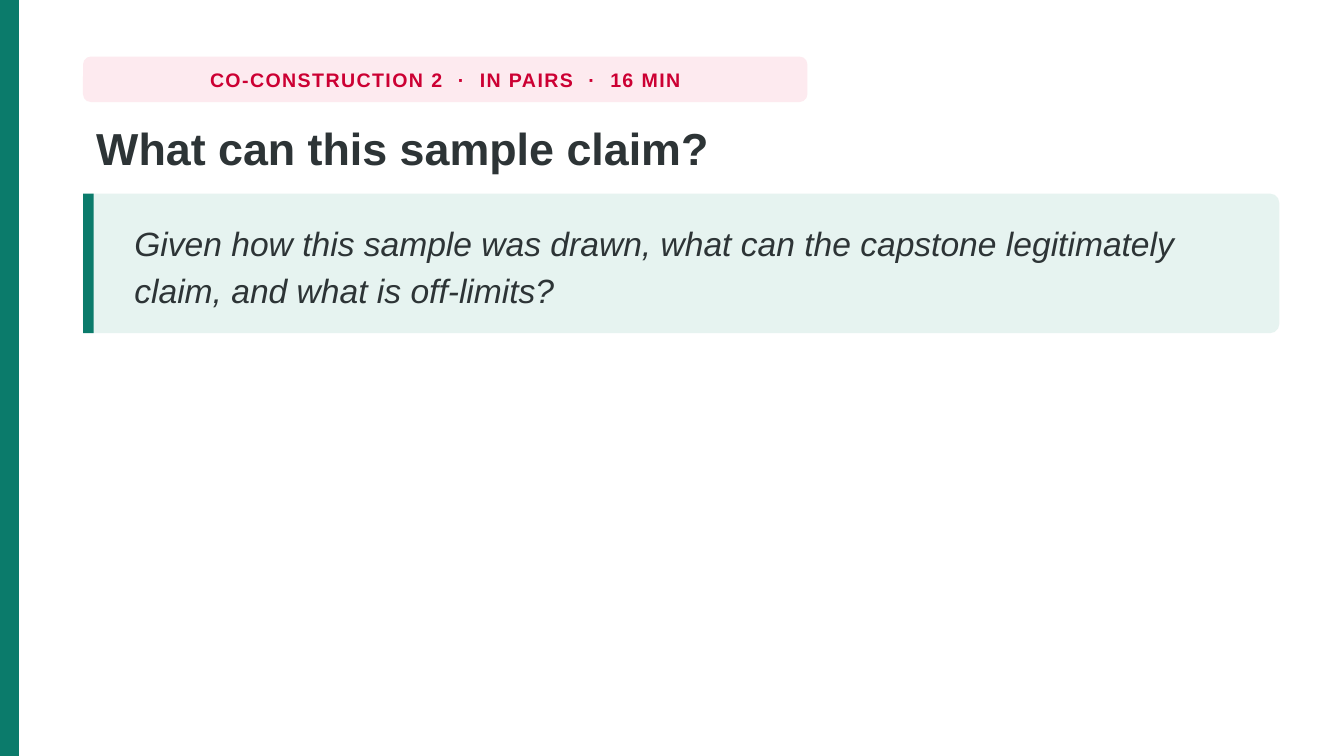
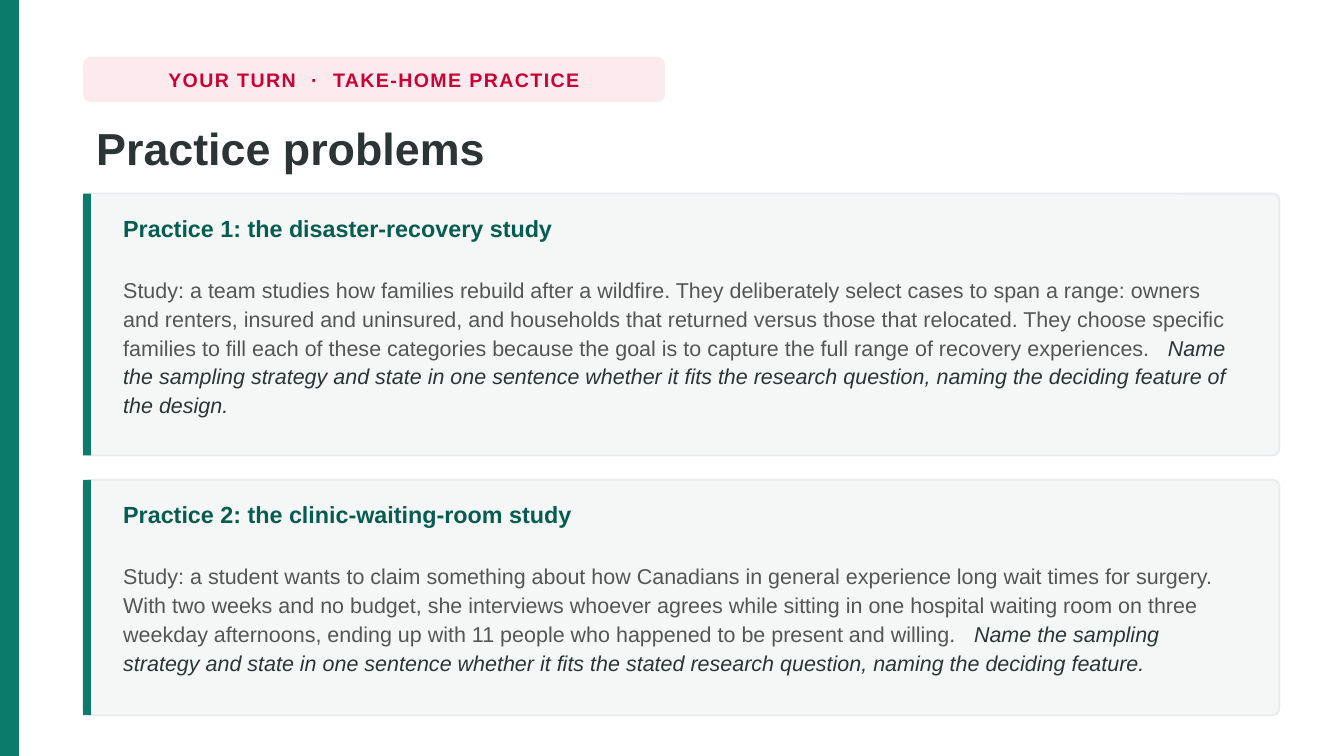
from dataclasses import dataclass

from pptx import Presentation
from pptx.dml.color import RGBColor as Rgb
from pptx.enum.shapes import MSO_SHAPE as Kind
from pptx.enum.text import MSO_ANCHOR as Anchor, PP_ALIGN as Align
from pptx.shapes.autoshape import Shape
from pptx.slide import Slide
from pptx.text.text import TextFrame as Frame, _Paragraph as Para, _Run as Run
from pptx.util import Cm, Pt


@dataclass(frozen=True)
class Theme:
    face: str = "Arial"
    green: str = "0B7B6B"
    deep: str = "065C50"
    mint: str = "E6F3F0"
    rose: str = "FDEAEF"
    red: str = "CC0033"
    ink: str = "2D3436"
    grey: str = "555555"
    pale: str = "F4F7F6"
    edge: str = "E8ECEE"
    tag: float = 10.5
    title: float = 24
    quote: float = 18
    head: float = 12.5
    body: float = 11.5


@dataclass(frozen=True)
class Box:
    """A place on the slide, in centimetres."""
    left: float
    top: float
    width: float
    height: float

    def lengths(self) -> tuple[Cm, Cm, Cm, Cm]:
        return Cm(self.left), Cm(self.top), Cm(self.width), Cm(self.height)


@dataclass(frozen=True)
class Card:
    head: str
    study: str
    task: str
    height: float


THEME = Theme()
WIDE, HIGH = 25.4, 14.29
LEFT, SPAN = 1.57, 22.61
TOP, GAP = 3.66, 0.46

CARDS = (
    Card(
        "Practice 1: the disaster-recovery study",
        "Study: a team studies how families rebuild after a wildfire. They deliberately "
        "select cases to span a range: owners and renters, insured and uninsured, and "
        "households that returned versus those that relocated. They choose specific "
        "families to fill each of these categories because the goal is to capture the "
        "full range of recovery experiences.",
        "Name the sampling strategy and state in one sentence whether it fits the "
        "research question, naming the deciding feature of the design.",
        4.95,
    ),
    Card(
        "Practice 2: the clinic-waiting-room study",
        "Study: a student wants to claim something about how Canadians in general "
        "experience long wait times for surgery. With two weeks and no budget, she "
        "interviews whoever agrees while sitting in one hospital waiting room on three "
        "weekday afternoons, ending up with 11 people who happened to be present and "
        "willing.",
        "Name the sampling strategy and state in one sentence whether it fits the "
        "stated research question, naming the deciding feature.",
        4.45,
    ),
)


def add_block(slide: Slide, box: Box, fill: str, round_by: float = 0,
              edge: str | None = None) -> Shape:
    """Draw a filled rectangle; round_by is the corner radius in centimetres."""
    kind = Kind.ROUNDED_RECTANGLE if round_by else Kind.RECTANGLE
    shape = slide.shapes.add_shape(kind, *box.lengths())
    shape.shadow.inherit = False
    shape.fill.solid()
    shape.fill.fore_color.rgb = Rgb.from_string(fill)
    if round_by:
        shape.adjustments[0] = round_by / box.height
    if edge:
        shape.line.color.rgb = Rgb.from_string(edge)
        shape.line.width = Pt(1)
    else:
        shape.line.fill.background()
    return shape


def add_frame(slide: Slide, box: Box, anchor: Anchor = Anchor.TOP,
              wrap: bool = True) -> Frame:
    frame = slide.shapes.add_textbox(*box.lengths()).text_frame
    frame.word_wrap = wrap
    frame.vertical_anchor = anchor
    return frame


def style(para: Para, size: float, ink: str, bold: bool = False,
          slant: bool = False, lead: float | None = None) -> None:
    font = para.font
    font.name = THEME.face
    font.size = Pt(size)
    font.bold = bold
    font.italic = slant
    font.color.rgb = Rgb.from_string(ink)
    if lead:
        para.line_spacing = lead


def add_run(para: Para, text: str, track: float = 0) -> Run:
    """Add a run; track is its letter spacing in points."""
    run = para.add_run()
    run.text = text
    if track:
        run.font._element.set("spc", str(round(track * 100)))
    return run


def add_tag(slide: Slide, parts: tuple[str, ...], width: float) -> None:
    box = Box(LEFT, 1.07, width, 0.86)
    add_block(slide, box, THEME.rose, 0.15)
    para = add_frame(slide, box, Anchor.MIDDLE, wrap=False).paragraphs[0]
    para.alignment = Align.CENTER
    style(para, THEME.tag, THEME.red, bold=True)
    for index, part in enumerate(parts):
        if index:
            for mark, track in ((" ", 4.5), ("·", 0.8), (" ", 4.5)):
                add_run(para, mark, track)
        add_run(para, part, 0.8)


def add_base(deck: Presentation, parts: tuple[str, ...], width: float,
             title: str) -> Slide:
    """Add a slide with the side band, tag and title."""
    slide = deck.slides.add_slide(deck.slide_layouts[6])
    add_block(slide, Box(0, 0, 0.36, HIGH), THEME.green)
    add_tag(slide, parts, width)
    para = add_frame(slide, Box(LEFT, 2.13, SPAN, 1.42)).paragraphs[0]
    style(para, THEME.title, THEME.ink, bold=True, lead=1.02)
    add_run(para, title)
    return slide


def add_panel(slide: Slide, box: Box, fill: str, round_by: float, band: float,
              edge: str | None = None) -> None:
    """Draw a rounded panel with a green band down its left side."""
    add_block(slide, box, fill, round_by, edge)
    add_block(slide, Box(box.left, box.top, band, box.height), THEME.green)


def add_quote(slide: Slide, text: str) -> None:
    box = Box(LEFT, TOP, SPAN, 2.64)
    add_panel(slide, box, THEME.mint, 0.18, 0.2)
    inner = Box(2.29, TOP + 0.13, 21.21, box.height - 0.26)
    para = add_frame(slide, inner, Anchor.MIDDLE).paragraphs[0]
    style(para, THEME.quote, THEME.ink, slant=True, lead=1.16)
    add_run(para, text)


def add_card(slide: Slide, card: Card, top: float) -> None:
    add_panel(slide, Box(LEFT, top, SPAN, card.height), THEME.pale, 0.13, 0.15,
              THEME.edge)
    frame = add_frame(slide, Box(2.08, top + 0.2, 21.54, card.height - 0.4))
    head = frame.paragraphs[0]
    style(head, THEME.head, THEME.deep, bold=True, lead=1.12)
    head.space_after = Pt(17)
    add_run(head, card.head)
    body = frame.add_paragraph()
    style(body, THEME.body, THEME.grey, lead=1.12)
    add_run(body, card.study)
    add_run(body, " ", 6.4)
    task = add_run(body, card.task)
    task.font.italic = True
    task.font.color.rgb = Rgb.from_string(THEME.ink)


def main() -> None:
    deck = Presentation()
    deck.slide_width, deck.slide_height = Cm(WIDE), Cm(HIGH)

    claim = add_base(deck, ("CO-CONSTRUCTION 2", "IN PAIRS", "16 MIN"), 13.69,
                     "What can this sample claim?")
    add_quote(claim, "Given how this sample was drawn, what can the capstone "
                     "legitimately claim, and what is off-limits?")

    tasks = add_base(deck, ("YOUR TURN", "TAKE-HOME PRACTICE"), 11,
                     "Practice problems")
    top = TOP
    for card in CARDS:
        add_card(tasks, card, top)
        top += card.height + GAP

    deck.save("out.pptx")


if __name__ == "__main__":
    main()
